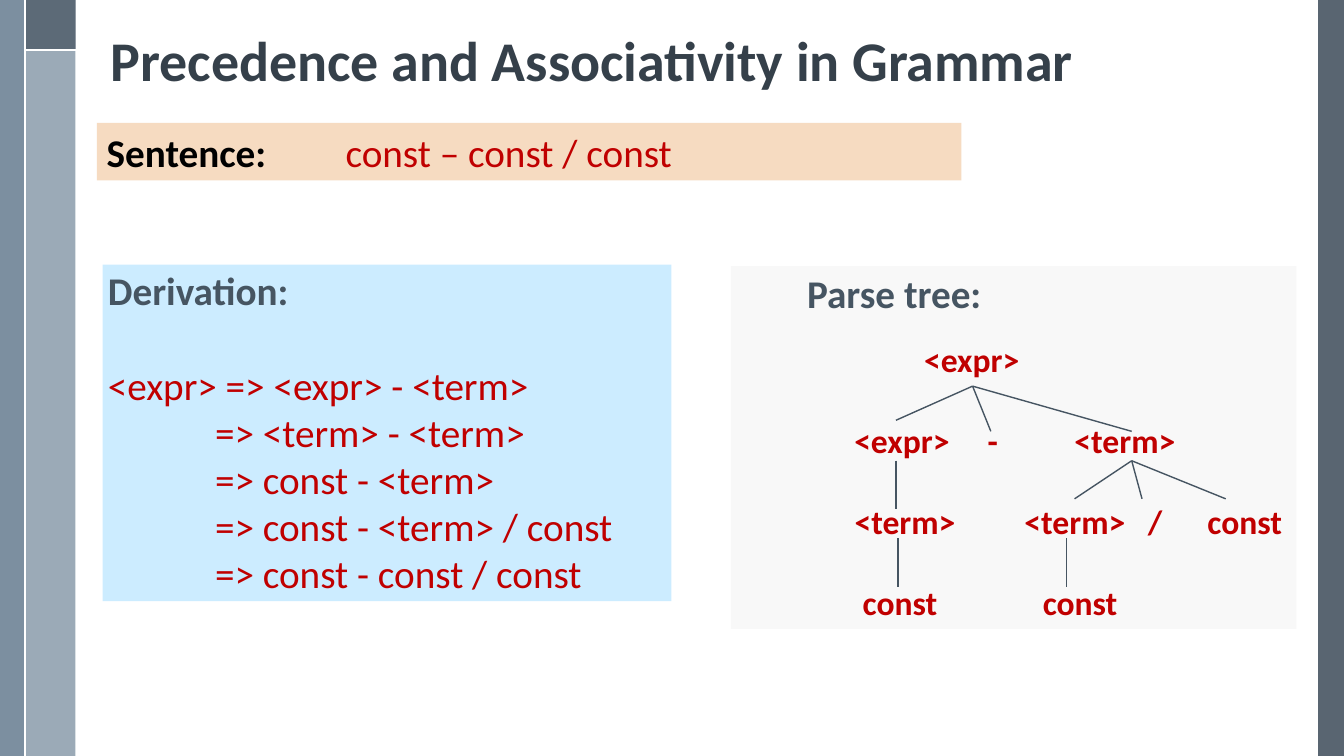
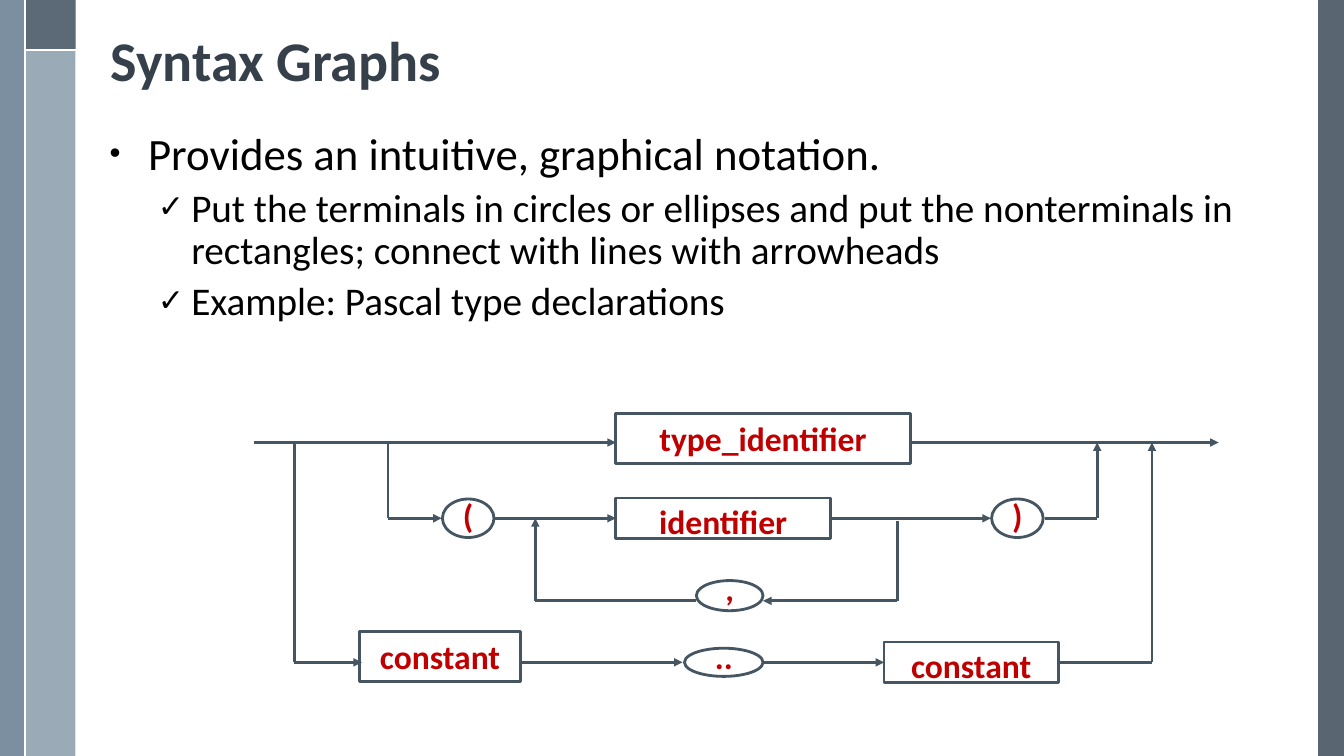
from dataclasses import dataclass

from pptx import Presentation
from pptx import util as u
from pptx.dml.color import RGBColor
from pptx.enum import shapes, text
from pptx.oxml import ns, xmlchemy

FONT = "Calibri"
BLACK = RGBColor(0x00, 0x00, 0x00)
WHITE = RGBColor(0xFF, 0xFF, 0xFF)
RED = RGBColor(0xC0, 0x00, 0x00)
TITLE = RGBColor(0x35, 0x40, 0x4A)
SLATE = RGBColor(0x46, 0x55, 0x62)
BAND_DARK = RGBColor(0x47, 0x55, 0x62)
BAND_MID = RGBColor(0x6A, 0x80, 0x93)
BAND_LIGHT = RGBColor(0x9B, 0xAA, 0xB7)
PEACH = RGBColor(0xF6, 0xDB, 0xC1)
SKY = RGBColor(0xCC, 0xEC, 0xFF)
PALE = RGBColor(0xF8, 0xF8, 0xF8)

RECT = shapes.MSO_SHAPE.RECTANGLE
OVAL = shapes.MSO_SHAPE.OVAL
TOP, MIDDLE = text.MSO_ANCHOR.TOP, text.MSO_ANCHOR.MIDDLE
CENTER = text.PP_ALIGN.CENTER
WIDTH, HEIGHT = 33.87, 19.05
LEFT_SIDE, RIGHT_SIDE = 1, 3


@dataclass(frozen=True)
class Band:
    x: float
    w: float
    h: float
    color: RGBColor
    opacity: int = 100


@dataclass(frozen=True)
class Bullet:
    words: str
    level: int
    size: int
    mark: str
    mark_pct: int
    indent: float
    hang: float


@dataclass(frozen=True)
class TreeNode:
    words: str
    x: float
    row: int


@dataclass(frozen=True)
class GraphNode:
    words: str
    kind: shapes.MSO_SHAPE
    x: float
    mid: float
    w: float
    h: float
    nudge: float = 0  # downward shift of the label


@dataclass(frozen=True)
class Wire:
    x1: float
    y1: float
    x2: float
    y2: float
    arrow: bool = False
    begin: str = ""
    end: str = ""


# Shared by both slides
BANDS = [
    Band(33.22, 0.65, HEIGHT, BAND_DARK, 90),
    Band(0.66, 1.24, HEIGHT, BAND_LIGHT),
    Band(0, 0.64, HEIGHT, BAND_MID, 88),
    Band(0.64, 1.27, 1.27, BAND_DARK, 75),
]
BAND_RULES = [(0.64, 1.27, 1.91, 1.27), (0.64, 0, 0.64, HEIGHT)]

# Parse tree
ROW_TOP, ROW_STEP = 9.04, 2.04
TREE_NODES = [
    TreeNode("<expr>", 24.49, 0),
    TreeNode("<expr>", 22.73, 1), TreeNode("-", 25.02, 1), TreeNode("<term>", 28.35, 1),
    TreeNode("<term>", 22.81, 2), TreeNode("<term>", 27.09, 2),
    TreeNode("/", 29.11, 2), TreeNode("const", 31.37, 2),
    TreeNode("const", 22.68, 3), TreeNode("const", 27.22, 3),
]
TREE_FANS = [
    ((24.51, 9.73), [(22.58, 10.59), (24.97, 10.87), (28.52, 10.87)]),
    ((22.58, 11.61), [(22.58, 12.83)]),
    ((28.52, 11.61), [(27.08, 12.57), (28.78, 12.57), (30.89, 12.57)]),
    ((22.63, 13.56), [(22.63, 14.78)]),
    ((26.87, 13.56), [(26.87, 14.78)]),
]
DERIVATION = ["=> <term> - <term>", "=> const - <term>",
              "=> const - <term> / const", "=> const - const / const"]

# Syntax graph: rails and columns
RAIL, LIST, LOOP, RANGE = 11.15, 13.06, 15.14, 16.69
OUTER_L, INNER_L, LOOP_L = 7.42, 9.78, 13.49
LOOP_R, INNER_R, OUTER_R = 22.61, 27.65, 29.03
GRAPH_NODES = {
    "open": GraphNode("(", OVAL, 11.15, LIST, 1.3, 0.97, -0.08),
    "close": GraphNode(")", OVAL, 24.99, LIST, 1.3, 0.97, -0.08),
    "dots": GraphNode("..", OVAL, 17.25, RANGE, 1.98, 0.71, -0.15),
    "comma": GraphNode(",", OVAL, 17.55, 15.01, 1.68, 0.76, -0.18),
    "type": GraphNode("type_identifier", RECT, 15.52, 11.05, 7.42, 1.27),
    "name": GraphNode("identifier", RECT, 15.52, LIST, 5.41, 1.02, 0.08),
    "low": GraphNode("constant", RECT, 9.07, 16.54, 4.04, 1.27),
    "high": GraphNode("constant", RECT, 22.28, RANGE, 4.39, 1.02, 0.06),
}
WIRES = [
    Wire(6.4, RAIL, 15.52, RAIL, True),
    Wire(22.94, RAIL, 30.71, RAIL, True),
    Wire(INNER_L, RAIL, INNER_L, LIST),
    Wire(INNER_L, LIST, 11.13, LIST, True),
    Wire(12.47, LIST, 15.52, LIST, True, end="name"),
    Wire(20.93, LIST, 24.97, LIST, True, begin="name"),
    Wire(26.34, LIST, INNER_R, LIST),
    Wire(INNER_R, LIST, INNER_R, RAIL, True),
    Wire(LOOP_R, 13.13, LOOP_R, LOOP),
    Wire(LOOP_R, LOOP, 19.23, LOOP, True),
    Wire(17.55, LOOP, LOOP_L, LOOP),
    Wire(LOOP_L, LOOP, LOOP_L, LIST, True),
    Wire(OUTER_L, RAIL, OUTER_L, RANGE),
    Wire(OUTER_L, RANGE, 9.12, RANGE, True),
    Wire(13.16, RANGE, 17.2, RANGE, True),
    Wire(19.23, RANGE, 22.28, RANGE, True, end="high"),
    Wire(26.67, RANGE, OUTER_R, RANGE, begin="high"),
    Wire(OUTER_R, RANGE, OUTER_R, RAIL, True),
]
BULLETS = [
    Bullet("Provides an intuitive, graphical notation.", 0, 32, "•", 70, 0.97, 0.97),
    Bullet("Put the terminals in circles or ellipses and put the nonterminals in "
           "rectangles; connect with lines with arrowheads", 1, 28, "✓", 80, 2.06, 0.84),
    Bullet("Example: Pascal type declarations", 1, 28, "✓", 80, 2.06, 0.84),
]


def add_xml(parent, tag: str, **attrs):
    el = xmlchemy.OxmlElement(tag)
    for name, value in attrs.items():
        el.set(name, str(value))
    parent.append(el)
    return el


def box(x: float, y: float, w: float, h: float) -> list:
    return [u.Cm(v) for v in (x, y, w, h)]


def add_run(p, words: str, size: int, color: RGBColor, bold: bool = False) -> None:
    r = p.add_run()
    r.text = words
    r.font.name, r.font.size, r.font.bold = FONT, u.Pt(size), bold
    r.font.color.rgb = color


def add_panel(s, kind, x: float, y: float, w: float, h: float, fill=None, line=None):
    sp = s.shapes.add_shape(kind, *box(x, y, w, h))
    sp.shadow.inherit = False
    if fill is None:
        sp.fill.background()
    else:
        sp.fill.solid()
        sp.fill.fore_color.rgb = fill
    if line is None:
        sp.line.fill.background()
    else:
        sp.line.color.rgb = line
        sp.line.width = u.Pt(2)
    return sp


def frame(sp, anchor, wrap: bool = True, side: float = 0.25, top: float = 0.13,
          bottom: float = 0.13):
    tf = sp.text_frame
    tf.word_wrap = wrap
    tf.vertical_anchor = anchor
    tf.margin_left = tf.margin_right = u.Cm(side)
    tf.margin_top, tf.margin_bottom = u.Cm(top), u.Cm(bottom)
    return tf


def add_line(s, x1: float, y1: float, x2: float, y2: float, color: RGBColor,
             width: float, arrow: bool = False):
    cx = s.shapes.add_connector(shapes.MSO_CONNECTOR.STRAIGHT, *box(x1, y1, x2, y2))
    cx.line.color.rgb = color
    cx.line.width = u.Pt(width)
    sp_pr = cx.element.spPr
    if arrow:
        add_xml(sp_pr.find(ns.qn("a:ln")), "a:tailEnd", type="triangle")
    add_xml(sp_pr, "a:effectLst")
    return cx


def add_bands(prs, s) -> None:
    """Draw the side bands and hand them to the master, behind its placeholders."""
    parts = []
    for b in BANDS:
        sp = add_panel(s, RECT, b.x, 0, b.w, b.h, fill=b.color)
        if b.opacity < 100:
            clr = sp.element.spPr.find(".//" + ns.qn("a:srgbClr"))
            add_xml(clr, "a:alpha", val=b.opacity * 1000)
        parts.append(sp)
    parts += [add_line(s, *rule, WHITE, 1.5) for rule in BAND_RULES]
    for i, part in enumerate(parts):
        part.element.find(".//" + ns.qn("p:cNvPr")).set("id", str(100 + i))
        prs.slide_master.shapes.element.insert(2 + i, part.element)


def add_slide(prs, layout: int, title: str):
    s = prs.slides.add_slide(prs.slide_layouts[layout])
    sp = s.shapes.title
    sp.left, sp.top, sp.width, sp.height = box(2.54, 0.48, 30.28, 2.01)
    tf = frame(sp, text.MSO_ANCHOR.BOTTOM)
    tf.auto_size = text.MSO_AUTO_SIZE.NONE
    p = tf.paragraphs[0]
    p.alignment, p.line_spacing = text.PP_ALIGN.LEFT, 0.9
    add_run(p, title, 40, TITLE, True)
    return s


def build_grammar(s) -> None:
    # Sentence
    tf = frame(add_panel(s, RECT, 2.44, 3.1, 21.79, 1.45, fill=PEACH), TOP)
    p = tf.paragraphs[0]
    p.alignment = text.PP_ALIGN.LEFT
    tabs = add_xml(p._p.get_or_add_pPr(), "a:tabLst")
    add_xml(tabs, "a:tab", pos=u.Cm(6.02), algn="l")
    add_run(p, "Sentence:", 28, BLACK, True)
    add_run(p, "\t", 28, BLACK)
    add_run(p, "const – const / const", 28, RED)

    # Derivation
    sp = add_panel(s, RECT, 2.59, 6.67, 14.33, 8.48, fill=SKY)
    tf = frame(sp, TOP, side=0.13, top=0.05, bottom=0.05)
    add_run(tf.paragraphs[0], "Derivation:", 28, SLATE, True)
    p = tf.add_paragraph()
    p.space_before = u.Pt(34)
    add_run(p, "<expr> => <expr> - <term>", 28, RED)
    for step in DERIVATION:
        p = tf.add_paragraph()
        p._p.get_or_add_pPr().set("marL", str(u.Cm(2.7)))
        add_run(p, step, 28, RED)
    for p in tf.paragraphs:
        p.alignment = text.PP_ALIGN.LEFT

    # Parse tree
    add_panel(s, RECT, 18.42, 6.71, 14.25, 9.14, fill=PALE)
    sp = s.shapes.add_textbox(*box(20.09, 6.65, 4.95, 1.45))
    add_run(frame(sp, TOP).paragraphs[0], "Parse tree:", 28, SLATE, True)
    for n in TREE_NODES:
        y = ROW_TOP + n.row * ROW_STEP
        sp = s.shapes.add_textbox(*box(n.x - 1.5, y - 0.5, 3, 1))
        p = frame(sp, MIDDLE, False, 0, 0, 0).paragraphs[0]
        p.alignment = CENTER
        add_run(p, n.words, 24, RED, True)
    for start, ends in TREE_FANS:
        for end in ends:
            add_line(s, *start, *end, SLATE, 1)


def build_graph(s) -> None:
    # Bulleted list
    body = s.placeholders[1]
    body.left, body.top, body.width, body.height = box(2.51, 3.18, 30.28, 15.44)
    tf = frame(body, TOP)
    tf.auto_size = text.MSO_AUTO_SIZE.NONE
    for i, b in enumerate(BULLETS):
        p = tf.add_paragraph() if i else tf.paragraphs[0]
        p_pr = p._p.get_or_add_pPr()
        p_pr.set("marL", str(u.Cm(b.indent)))
        p_pr.set("indent", str(-u.Cm(b.hang)))
        add_xml(p_pr, "a:buSzPct", val=b.mark_pct * 1000)
        add_xml(p_pr, "a:buChar", char=b.mark)
        p.level, p.line_spacing = b.level, 0.9
        p.space_before = u.Pt(6 if i else 0)
        add_run(p, b.words, b.size, BLACK)

    # Syntax graph
    drawn = {}
    for key, n in GRAPH_NODES.items():
        sp = add_panel(s, n.kind, n.x, n.mid - n.h / 2, n.w, n.h, line=SLATE)
        tf = frame(sp, MIDDLE, False, 0, max(2 * n.nudge, 0), max(-2 * n.nudge, 0))
        p = tf.paragraphs[0]
        p.alignment = CENTER
        add_run(p, n.words, 24, RED, True)
        drawn[key] = sp
    for w in WIRES:
        cx = add_line(s, w.x1, w.y1, w.x2, w.y2, SLATE, 2, w.arrow)
        if w.begin:
            cx.begin_connect(drawn[w.begin], RIGHT_SIDE)
        if w.end:
            cx.end_connect(drawn[w.end], LEFT_SIDE)


def main() -> None:
    prs = Presentation()
    prs.slide_width, prs.slide_height = u.Cm(WIDTH), u.Cm(HEIGHT)
    s = add_slide(prs, 5, "Precedence and Associativity in Grammar")
    add_bands(prs, s)
    build_grammar(s)
    build_graph(add_slide(prs, 1, "Syntax Graphs"))
    prs.save("out.pptx")


if __name__ == "__main__":
    main()
